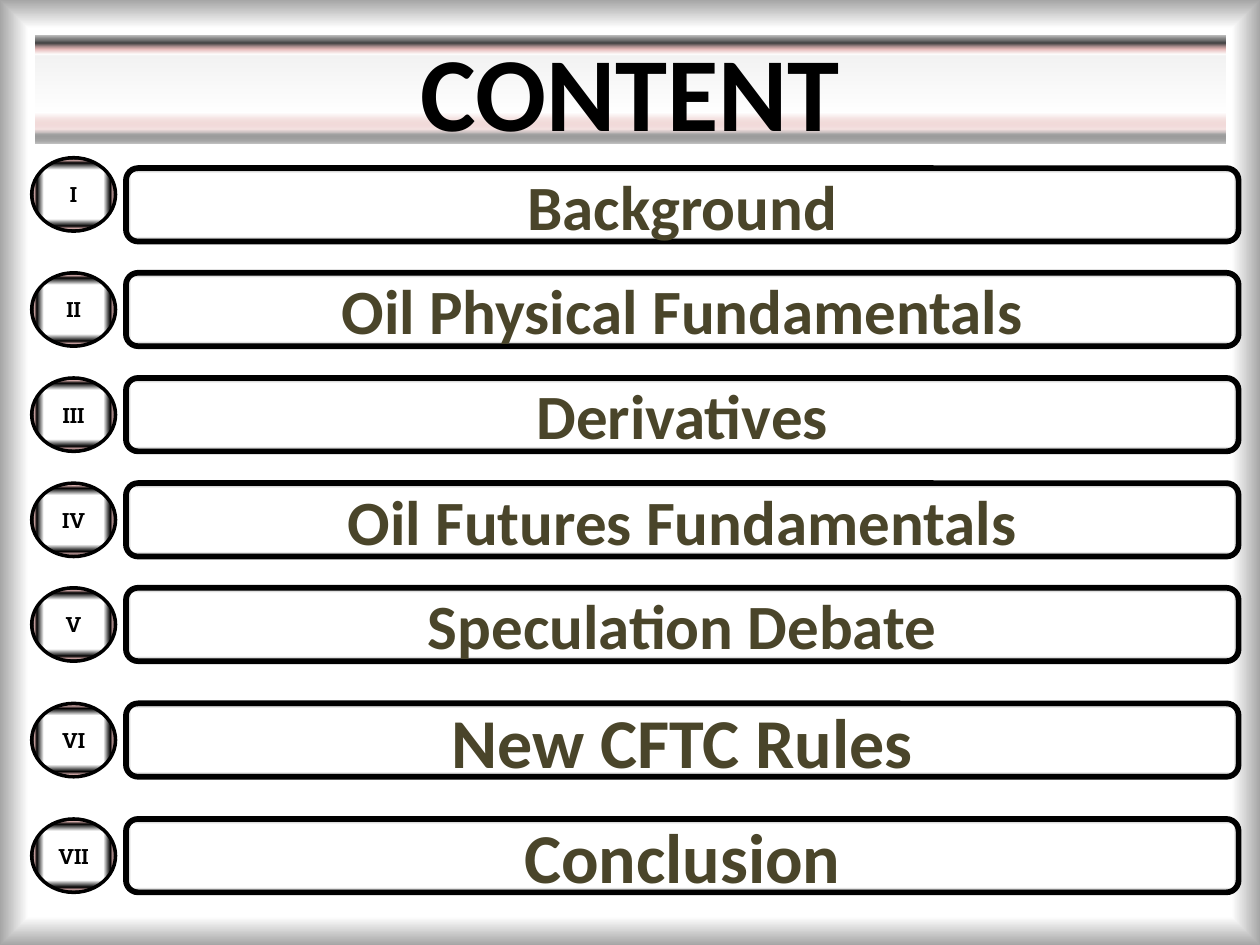
from lxml import etree
from pptx import Presentation
from pptx.dml.color import RGBColor
from pptx.enum.shapes import MSO_SHAPE
from pptx.enum.text import MSO_ANCHOR, MSO_AUTO_SIZE, PP_ALIGN
from pptx.oxml.ns import qn
from pptx.util import Cm, Pt

PILL, BALL = MSO_SHAPE.ROUNDED_RECTANGLE, MSO_SHAPE.OVAL
MIDDLE, CENTER, NO_FIT = MSO_ANCHOR.MIDDLE, PP_ALIGN.CENTER, MSO_AUTO_SIZE.NONE

WHITE = RGBColor(0xFF, 0xFF, 0xFF)
BLACK = RGBColor(0x00, 0x00, 0x00)
OLIVE = RGBColor(0x4A, 0x45, 0x2A)
PEACH = RGBColor(0xFC, 0xD5, 0xB5)
PINK = RGBColor(0xE6, 0xB9, 0xB8)
ROSE = RGBColor(0xD9, 0x96, 0x94)
INK = RGBColor(0x0D, 0x0D, 0x0D)
CHARCOAL = RGBColor(0x40, 0x40, 0x40)
GREY = RGBColor(0xA6, 0xA6, 0xA6)
SILVER = RGBColor(0xBF, 0xBF, 0xBF)
MIST = RGBColor(0xF2, 0xF2, 0xF2)

PAGE_STOPS = [(36, WHITE), (61, WHITE), (94, WHITE), (100, GREY), (100, PEACH), (100, BLACK)]
PILL_STOPS = [(18, WHITE), (36, WHITE), (86, WHITE), (94, SILVER), (100, WHITE)]
BALL_STOPS = [(18, WHITE), (67, WHITE), (86, BLACK), (94, PINK), (96, BLACK), (100, WHITE)]
BANNER_STOPS = [(0, WHITE), (10, CHARCOAL), (15, PINK), (20, WHITE), (21, MIST),
                (70, WHITE), (84, ROSE, 27), (88, INK, 38), (100, WHITE)]

SECTIONS = [
    ("I", "Background", 3.18, 36),
    ("II", "Oil Physical Fundamentals", 5.5, 36),
    ("III", "Derivatives", 7.62, 36),
    ("IV", "Oil Futures Fundamentals", 9.74, 36),
    ("V", "Speculation Debate", 11.85, 36),
    ("VI", "New CFTC Rules", 14.18, 40),
    ("VII", "Conclusion", 16.51, 40),
]
FIRST_PILL_DROP = 0.21
ROW_HEIGHT = 1.48


class ContentSlide:
    """Holds the current slide and the glossy style of its elements."""

    body_font = "Calibri"
    numeral_font = "Roboto Slab"

    def __init__(self, deck):
        self.slide = deck.slides.add_slide(deck.slide_layouts[5])

    def gradient(self, fill, holder, stops, angle=None):
        fill.background()
        grad = etree.Element(qn("a:gradFill"), rotWithShape="1")
        stop_list = etree.SubElement(grad, qn("a:gsLst"))
        for position, color, *opacity in stops:
            stop = etree.SubElement(stop_list, qn("a:gs"), pos=str(position * 1000))
            tone = etree.SubElement(stop, qn("a:srgbClr"), val=str(color))
            for percent in opacity:
                etree.SubElement(tone, qn("a:alpha"), val=str(percent * 1000))
        if angle is None:
            route = etree.SubElement(grad, qn("a:path"), path="shape")
            etree.SubElement(route, qn("a:fillToRect"),
                             {side: "50000" for side in "ltrb"})
        else:
            etree.SubElement(grad, qn("a:lin"), ang=str(angle * 60000), scaled="0")
        blank = next(holder.iter(qn("a:noFill")))
        blank.getparent().replace(blank, grad)

    def page(self, stops):
        self.gradient(self.slide.background.fill, self.slide.element, stops)

    def finish(self, shape, stops, line, width, text, font, size, color, angle=None):
        self.gradient(shape.fill, shape.element.spPr, stops, angle)
        shape.line.color.rgb = line
        shape.line.width = Pt(width)
        shape.shadow.inherit = False
        frame = shape.text_frame
        frame.text = text
        frame.word_wrap = True
        frame.auto_size = NO_FIT
        frame.vertical_anchor = MIDDLE
        paragraph = frame.paragraphs[0]
        paragraph.alignment = CENTER
        paragraph.font.name = font
        paragraph.font.size = Pt(size)
        paragraph.font.bold = True
        paragraph.font.color.rgb = color

    def banner(self, text):
        title = self.slide.shapes.title
        title.left, title.top = Cm(0.64), Cm(0.64)
        title.width, title.height = Cm(24.13), Cm(2.33)
        outline = etree.SubElement(title.element.spPr, qn("a:prstGeom"), prst="roundRect")
        guides = etree.SubElement(outline, qn("a:avLst"))
        etree.SubElement(guides, qn("a:gd"), name="adj", fmla="val 3300")
        self.finish(title, BANNER_STOPS, WHITE, 3.25, text,
                    self.body_font, 60, BLACK, angle=90)

    def pill(self, text, top, size):
        pill = self.slide.shapes.add_shape(PILL, Cm(2.54), Cm(top), Cm(22.43), Cm(ROW_HEIGHT))
        self.finish(pill, PILL_STOPS, BLACK, 3.25, text, self.body_font, size, OLIVE)

    def ball(self, numeral, top):
        ball = self.slide.shapes.add_shape(BALL, Cm(0.64), Cm(top), Cm(1.69), Cm(ROW_HEIGHT))
        self.finish(ball, BALL_STOPS, BLACK, 2, numeral, self.numeral_font, 12, BLACK)


def main():
    deck = Presentation()
    deck.slide_width, deck.slide_height = Cm(25.4), Cm(19.05)
    content = ContentSlide(deck)
    content.page(PAGE_STOPS)
    content.banner("CONTENT")
    for index, (numeral, section, top, size) in enumerate(SECTIONS):
        content.pill(section, top if index else top + FIRST_PILL_DROP, size)
        content.ball(numeral, top)
    deck.save("out.pptx")


if __name__ == "__main__":
    main()
